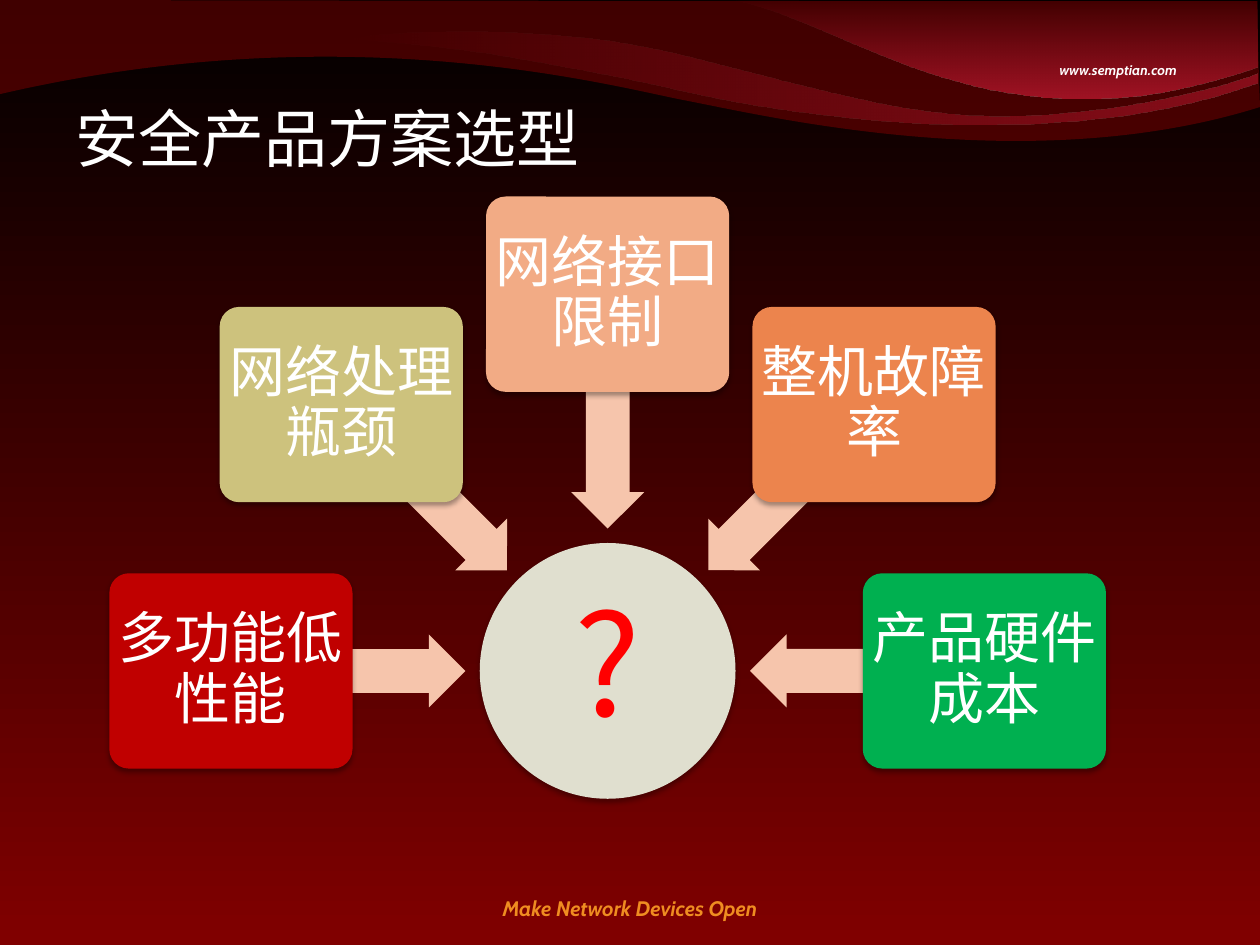
from dataclasses import dataclass
from itertools import chain
from math import cos, radians, sin

from lxml.etree import SubElement
from pptx import Presentation
from pptx.dml.color import RGBColor
from pptx.enum.shapes import MSO_SHAPE
from pptx.enum.text import MSO_ANCHOR, PP_ALIGN
from pptx.oxml.ns import qn
from pptx.util import Inches, Pt

WIDE, HIGH = Inches(10), Inches(7.5)


@dataclass(frozen=True)
class Theme:
    night: str = "000000"
    wine: str = "800000"
    rose: str = "CA1C35"
    gold: str = "EF8D21"
    white: str = "FFFFFF"
    red: str = "FF0000"
    hub: str = "E0DFCF"
    arrow: str = "F6C5AC"
    brand: str = "Cabin"
    head: str = "Karla"
    body: str = "Noto Sans CJK SC"
    tiny: int = 8
    small: int = 12
    card: int = 32
    title: int = 36
    mark: int = 80


@dataclass(frozen=True)
class Style:
    font: str
    size: int
    color: str
    bold: bool = False
    align: PP_ALIGN = PP_ALIGN.LEFT


@dataclass(frozen=True)
class Card:
    text: str
    color: str


@dataclass(frozen=True)
class Wave:
    start: tuple
    curves: tuple  # each: two control points, then the end point
    stops: tuple  # (colour, opacity in percent)
    angle: int = 0


THEME = Theme()


def pc(share: float) -> int:
    """Length given as a percentage of the slide width."""
    return round(WIDE * share / 100)


def rgb(code: str) -> RGBColor:
    return RGBColor.from_string(code)


def blend(fill, colors, angle: int) -> None:
    fill.gradient()
    fill.gradient_angle = angle
    for stop, color in zip(fill.gradient_stops, colors):
        stop.color.rgb = rgb(color)


def write(shape, text: str, style: Style, inset=None, wrap=True) -> None:
    frame = shape.text_frame
    frame.word_wrap = wrap
    frame.vertical_anchor = MSO_ANCHOR.MIDDLE
    para = frame.paragraphs[0]
    para.alignment = style.align
    if inset is not None:
        frame.margin_left = frame.margin_right = pc(inset)
        frame.margin_top = frame.margin_bottom = pc(inset)
        para.line_spacing = 0.9
    run = para.add_run()
    run.text = text
    font = run.font
    font.name, font.size = style.font, Pt(style.size)
    font.bold = font.italic = style.bold
    font.color.rgb = rgb(style.color)
    SubElement(font._element, qn("a:ea"), typeface=THEME.body)


def label(slide, box, text: str, style: Style, wrap=True) -> None:
    write(slide.shapes.add_textbox(*map(pc, box)), text, style, wrap=wrap)


def place(slide, kind, mid, size, color: str, shade=False):
    """Draw a plain shape around its middle point."""
    (x, y), (w, h) = mid, size
    shape = slide.shapes.add_shape(kind, pc(x - w / 2), pc(y - h / 2), pc(w), pc(h))
    shape.fill.solid()
    shape.fill.fore_color.rgb = rgb(color)
    shape.line.fill.background()
    shape.shadow.inherit = False
    if shade:
        effects = shape._element.spPr.find(qn("a:effectLst"))
        cast = SubElement(effects, qn("a:outerShdw"), blurRad=str(Pt(3.1)),
                          dist=str(Pt(1.8)), dir="5400000", rotWithShape="0")
        tint = SubElement(cast, qn("a:srgbClr"), val=THEME.night)
        SubElement(tint, qn("a:alpha"), val="35000")
    return shape


def bend(shape) -> None:
    """Turn each three line segments of a freeform into one cubic curve."""
    lines = list(shape._element.spPr.iter(qn("a:lnTo")))
    for i in range(0, len(lines), 3):
        track = lines[i].getparent()
        curve = track.makeelement(qn("a:cubicBezTo"), {})
        track.insert(track.index(lines[i]), curve)
        for line in lines[i:i + 3]:
            curve.append(line[0])
            track.remove(line)


def ripple(slide, wave: Wave) -> None:
    pen = slide.shapes.build_freeform(*map(pc, wave.start))
    dots = chain.from_iterable(wave.curves)
    pen.add_line_segments([(pc(x), pc(y)) for x, y in dots], close=True)
    shape = pen.convert_to_shape()
    bend(shape)
    shape.shadow.inherit = False
    shape.line.fill.background()
    if len(wave.stops) == 1:
        shape.fill.solid()
        shape.fill.fore_color.rgb = rgb(wave.stops[0][0])
    else:
        blend(shape.fill, [color for color, _ in wave.stops], wave.angle)
    tints = shape._element.spPr.iter(qn("a:srgbClr"))
    for tint, (_, alpha) in zip(list(tints), wave.stops):
        SubElement(tint, qn("a:alpha"), val=str(alpha * 1000))


WAVES = (
    Wave((-0.1, 7.5), (
        ((26.9, 1.2), (47.6, 6.6), (54, 7.9)),
        ((60.4, 9.1), (81.5, 14.3), (100, 8.5)),
        ((100, 8.5), (99.8, 3.4), (99.8, 0.1)),
        ((49.7, 0.1), (-0.1, 0), (-0.1, 0)),
        ((-0.1, 2.7), (-0.1, 4.9), (-0.1, 7.5)),
    ), ((THEME.wine, 50),)),
    Wave((39, 4.3), (
        ((46.8, 5.6), (50.8, 6.4), (54.1, 7.2)),
        ((57.3, 7.9), (81.6, 13.2), (99.8, 6.6)),
        ((99.8, 6.6), (99.8, 6.8), (99.8, 5.8)),
        ((96.1, 7.3), (85.5, 9.6), (76.8, 9.1)),
        ((68.1, 8.7), (55.8, 4.2), (47.6, 3.2)),
        ((39.3, 2.2), (31.9, 2.5), (27.3, 3.1)),
        ((27.4, 3.2), (31.9, 3.3), (39, 4.3)),
    ), ((THEME.rose, 0), (THEME.rose, 50))),
    Wave((99.8, -0.1), (
        ((99.8, 2.6), (99.8, 5.3), (99.8, 5.3)),
        ((78.8, 12.7), (67.8, 1.8), (57.7, -0.1)),
        ((57.7, -0.1), (78.8, -0.1), (99.8, -0.1)),
    ), ((THEME.rose, 0), (THEME.rose, 70)), 270),
)

CARDS = (
    Card("多功能低性能", "C00000"),
    Card("网络处理瓶颈", "CDC27D"),
    Card("网络接口限制", "F2AB85"),
    Card("整机故障率", "EC844D"),
    Card("产品硬件成本", "00B050"),
)
HUB = (48.23, 53.25)
NEAR, FAR = 20.6, 29.9  # radii of the arrows and the cards


def orbit(radius: float, angle: float) -> tuple:
    turn = radians(angle)
    return HUB[0] + radius * cos(turn), HUB[1] + radius * sin(turn)


def main() -> None:
    deck = Presentation()
    deck.slide_width, deck.slide_height = WIDE, HIGH
    slide = deck.slides.add_slide(deck.slide_layouts[6])

    # Backdrop
    blend(slide.background.fill, (THEME.night, THEME.wine), 270)
    for wave in WAVES:
        ripple(slide, wave)

    # Slogan, address and title
    label(slide, (0, 70.6, 100, 3), "Make Network Devices Open",
          Style(THEME.brand, THEME.small, THEME.gold, True, PP_ALIGN.CENTER))
    label(slide, (83.1, 4.4, 11.4, 2.3), "www.semptian.com",
          Style(THEME.brand, THEME.tiny, THEME.white, True), wrap=False)
    label(slide, (5, 5.5, 75.8, 10.8), "安全产品方案选型",
          Style(THEME.head, THEME.title, THEME.white))

    # Hub
    hub = place(slide, MSO_SHAPE.OVAL, HUB, (20.3, 20.3), THEME.hub, shade=True)
    write(hub, "?", Style(THEME.body, THEME.mark, THEME.red, align=PP_ALIGN.CENTER), 0)

    # Cards on a half circle, each with an arrow to the hub
    style = Style(THEME.body, THEME.card, THEME.white, align=PP_ALIGN.CENTER)
    for i, card in enumerate(CARDS):
        angle = 180 + i * 180 / (len(CARDS) - 1)
        arrow = place(slide, MSO_SHAPE.LEFT_ARROW, orbit(NEAR, angle), (18.6, 5.8), THEME.arrow)
        arrow.adjustments[0], arrow.adjustments[1] = 0.6, 0.5
        arrow.rotation = angle % 360
        box = place(slide, MSO_SHAPE.ROUNDED_RECTANGLE, orbit(FAR, angle),
                    (19.3, 15.5), card.color, shade=True)
        box.adjustments[0] = 0.1
        write(box, card.text, style, 0.2)

    deck.save("out.pptx")


if __name__ == "__main__":
    main()
